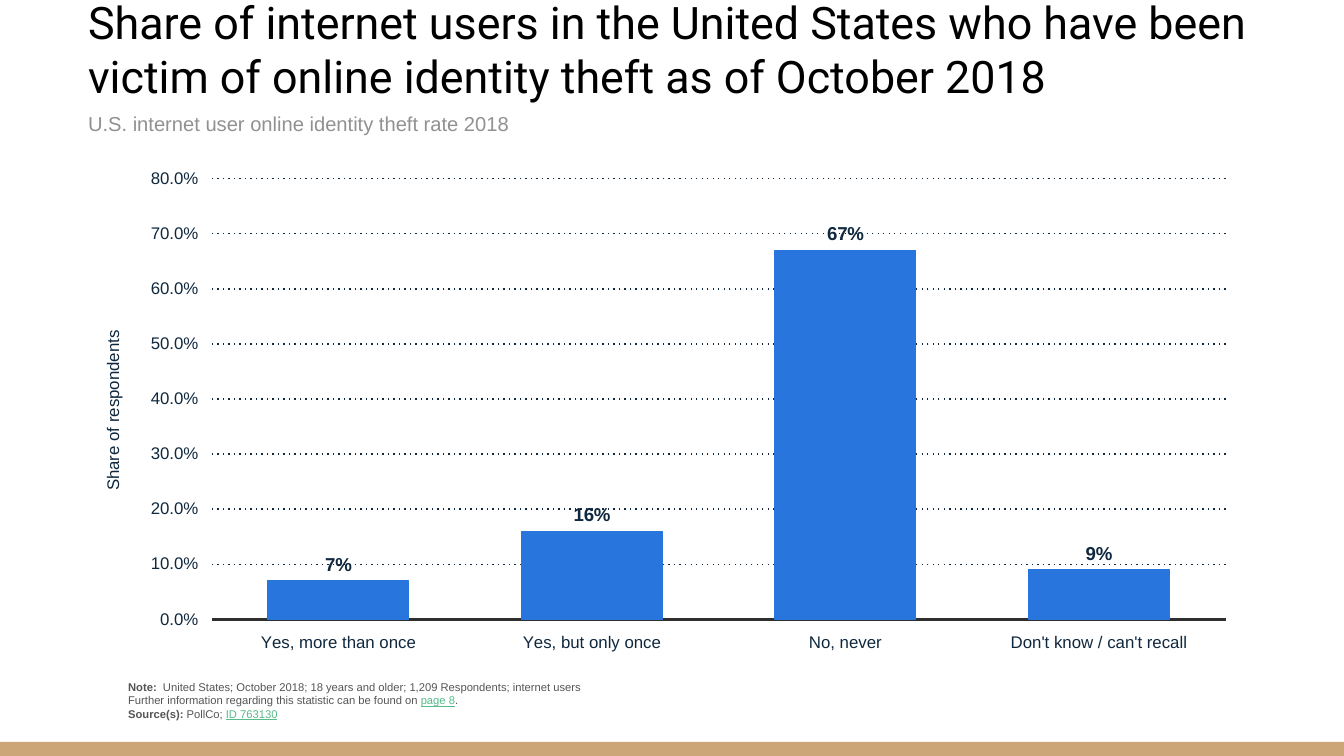
"""Build a slide with a column chart on online identity theft in the United States."""
from dataclasses import dataclass

from lxml.etree import SubElement
from pptx import Presentation
from pptx.chart.data import CategoryChartData
from pptx.dml.color import RGBColor
from pptx.enum.chart import XL_CHART_TYPE as Chart, XL_LABEL_POSITION as LabelPos
from pptx.enum.chart import XL_TICK_LABEL_POSITION as TickPos, XL_TICK_MARK as Tick
from pptx.enum.dml import MSO_LINE_DASH_STYLE as Dash
from pptx.enum.shapes import MSO_SHAPE as Shape
from pptx.enum.text import MSO_ANCHOR as Anchor, MSO_AUTO_SIZE as AutoSize, PP_ALIGN as Align
from pptx.oxml import parse_xml
from pptx.oxml.ns import nsdecls, qn
from pptx.util import Emu, Pt

PX = 4572


@dataclass(frozen=True)
class Theme:
    """Colours, fonts and type sizes of the slide."""
    ink: str = "000000"
    muted: str = "919191"
    note: str = "555555"
    link: str = "57BB8A"
    chart: str = "0F283E"
    axis: str = "2F2F2F"
    bar: str = "2875DD"
    band: str = "CCA677"
    head_font: str = "Roboto"
    font: str = "Arial"
    title: float = 24
    subtitle: float = 10.8
    axis_text: float = 9
    label: float = 10
    note_text: float = 6


@dataclass(frozen=True)
class Box:
    """A rectangle in px, at 200 px to the inch."""
    x: int
    y: int
    w: int
    h: int

    def emu(self) -> tuple:
        """Return left, top, width and height in EMU."""
        return tuple(Emu(v * PX) for v in (self.x, self.y, self.w, self.h))


@dataclass(frozen=True)
class Span:
    """A stretch of note text with its emphasis."""
    text: str
    bold: bool = False
    link: bool = False


T = Theme()
CHART = Box(112, 236, 1748, 750)
PLOT = Box(315, 266, 1509, 656)
AXIS_TITLE = Box(147, 487, 0, 0)
TITLE = ("Share of internet users in the United States who have been victim of "
         "online identity theft as of October 2018")
SUBTITLE = "U.S. internet user online identity theft rate 2018"
MEASURE = "Share of respondents"
SHARES = {"Yes, more than once": 0.07, "Yes, but only once": 0.16,
          "No, never": 0.67, "Don't know / can't recall": 0.09}
NOTES = (
    (Span("Note: ", bold=True),
     Span(" United States; October 2018; 18 years and older; 1,209 Respondents; internet users")),
    (Span("Further information regarding this statistic can be found on "),
     Span("page 8", link=True), Span(".")),
    (Span("Source(s): ", bold=True), Span("PollCo; "), Span("ID 763130", link=True)),
)


def style(font, size: float, color: str, name: str = T.font, bold: bool = False) -> None:
    """Set size, colour, typeface and weight of a font."""
    font.size, font.name, font.bold = Pt(size), name, bold
    font.color.rgb = RGBColor.from_string(color)


def set_frame(tf, anchor: Anchor) -> None:
    """Make a text frame wrap at a fixed size."""
    tf.word_wrap, tf.auto_size, tf.vertical_anchor = True, AutoSize.NONE, anchor


def fill_placeholder(sp, box: Box, text: str, anchor: Anchor, size: float,
                     color: str, name: str, spacing: float) -> None:
    """Give a placeholder its place and one plain left-aligned paragraph."""
    sp.left, sp.top, sp.width, sp.height = box.emu()
    tf = sp.text_frame
    set_frame(tf, anchor)
    tf.text = text
    p = tf.paragraphs[0]
    p.alignment, p.line_spacing, p.space_before = Align.LEFT, spacing, Pt(0)
    pPr = p._p.get_or_add_pPr()
    pPr.set("marL", "0")
    pPr.set("indent", "0")
    SubElement(pPr, qn("a:buNone"))
    style(p.runs[0].font, size, color, name)


def add_notes(slide, box: Box) -> None:
    """Add the note lines under the chart."""
    tf = slide.shapes.add_textbox(*box.emu()).text_frame
    set_frame(tf, Anchor.BOTTOM)
    for i, spans in enumerate(NOTES):
        p = tf.add_paragraph() if i else tf.paragraphs[0]
        for span in spans:
            r = p.add_run()
            r.text = span.text
            style(r.font, T.note_text, T.link if span.link else T.note, bold=span.bold)
            r.font.underline = span.link


def add_band(slide, box: Box) -> None:
    """Add the coloured band at the foot."""
    sp = slide.shapes.add_shape(Shape.RECTANGLE, *box.emu())
    sp.shadow.inherit = False
    sp.fill.solid()
    sp.fill.fore_color.rgb = RGBColor.from_string(T.band)
    sp.line.fill.background()


def set_layout(parent, box: Box) -> None:
    """Fix the place of a chart part, and its size if the box has one."""
    old = parent.find(qn("c:layout"))
    index = 0 if old is None else parent.index(old)
    if old is not None:
        parent.remove(old)
    values = {"x": (box.x - CHART.x) / CHART.w, "y": (box.y - CHART.y) / CHART.h}
    target = ""
    if box.w:
        values |= {"w": box.w / CHART.w, "h": box.h / CHART.h}
        target = '<c:layoutTarget val="inner"/>'
    places = "".join(f'<c:{k} val="{v}"/>' for k, v in values.items())
    parent.insert(index, parse_xml(
        f'<c:layout {nsdecls("c")}><c:manualLayout>{target}<c:xMode val="edge"/>'
        f'<c:yMode val="edge"/>{places}</c:manualLayout></c:layout>'))


def add_share_chart(slide) -> None:
    """Add the column chart of answers."""
    data = CategoryChartData(number_format="0%")
    data.categories = list(SHARES)
    data.add_series(MEASURE, list(SHARES.values()))
    chart = slide.shapes.add_chart(Chart.COLUMN_CLUSTERED, *CHART.emu(), data).chart
    chart.has_title = chart.has_legend = False
    style(chart.font, T.axis_text, T.chart)
    set_layout(chart._chartSpace.chart.plotArea, PLOT)

    cat, val = chart.category_axis, chart.value_axis
    for axis in (cat, val):
        axis.major_tick_mark = axis.minor_tick_mark = Tick.NONE
        axis.tick_label_position = TickPos.LOW
        style(axis.tick_labels.font, T.axis_text, T.chart)
    cat.format.line.width = Pt(2)
    cat.format.line.color.rgb = RGBColor.from_string(T.axis)

    val.minimum_scale, val.maximum_scale, val.major_unit = 0, 0.8, 0.1
    val.tick_labels.number_format = "#,##0.0%"
    val.tick_labels.number_format_is_linked = False
    val.format.line.fill.background()
    grid = val.major_gridlines.format.line
    grid.color.rgb = RGBColor.from_string(T.chart)
    grid.width, grid.dash_style = Pt(0.75), Dash.ROUND_DOT
    for dash in val.major_gridlines._xAx.iter(qn("a:prstDash")):
        dash.set("val", "dot")
    tf = val.axis_title.text_frame
    tf.text = MEASURE
    style(tf.paragraphs[0].runs[0].font, T.axis_text, T.chart)
    set_layout(val.axis_title._element, AXIS_TITLE)

    plot = chart.plots[0]
    plot.gap_width, plot.overlap, plot.vary_by_categories = 80, -10, False
    bars = plot.series[0].format
    bars.fill.solid()
    bars.fill.fore_color.rgb = bars.line.color.rgb = RGBColor.from_string(T.bar)
    bars.line.width = Pt(0.75)
    labels = plot.series[0].data_labels
    labels.show_value, labels.position = True, LabelPos.OUTSIDE_END
    style(labels.font, T.label, T.chart, bold=True)


def main() -> None:
    """Build and save the slide."""
    prs = Presentation()
    prs.slide_width, prs.slide_height = Emu(2000 * PX), Emu(1125 * PX)
    slide = prs.slides.add_slide(prs.slide_layouts[1])
    title, body = slide.placeholders
    add_band(slide, Box(0, 1104, 2000, 21))
    fill_placeholder(title, Box(111, 66, 1777, 96), TITLE, Anchor.BOTTOM,
                     T.title, T.ink, T.head_font, 1.0)
    fill_placeholder(body, Box(111, 160, 1777, 54), SUBTITLE, Anchor.TOP,
                     T.subtitle, T.muted, T.font, 0.9)
    add_notes(slide, Box(171, 982, 1358, 100))
    add_share_chart(slide)
    prs.save("out.pptx")


if __name__ == "__main__":
    main()
